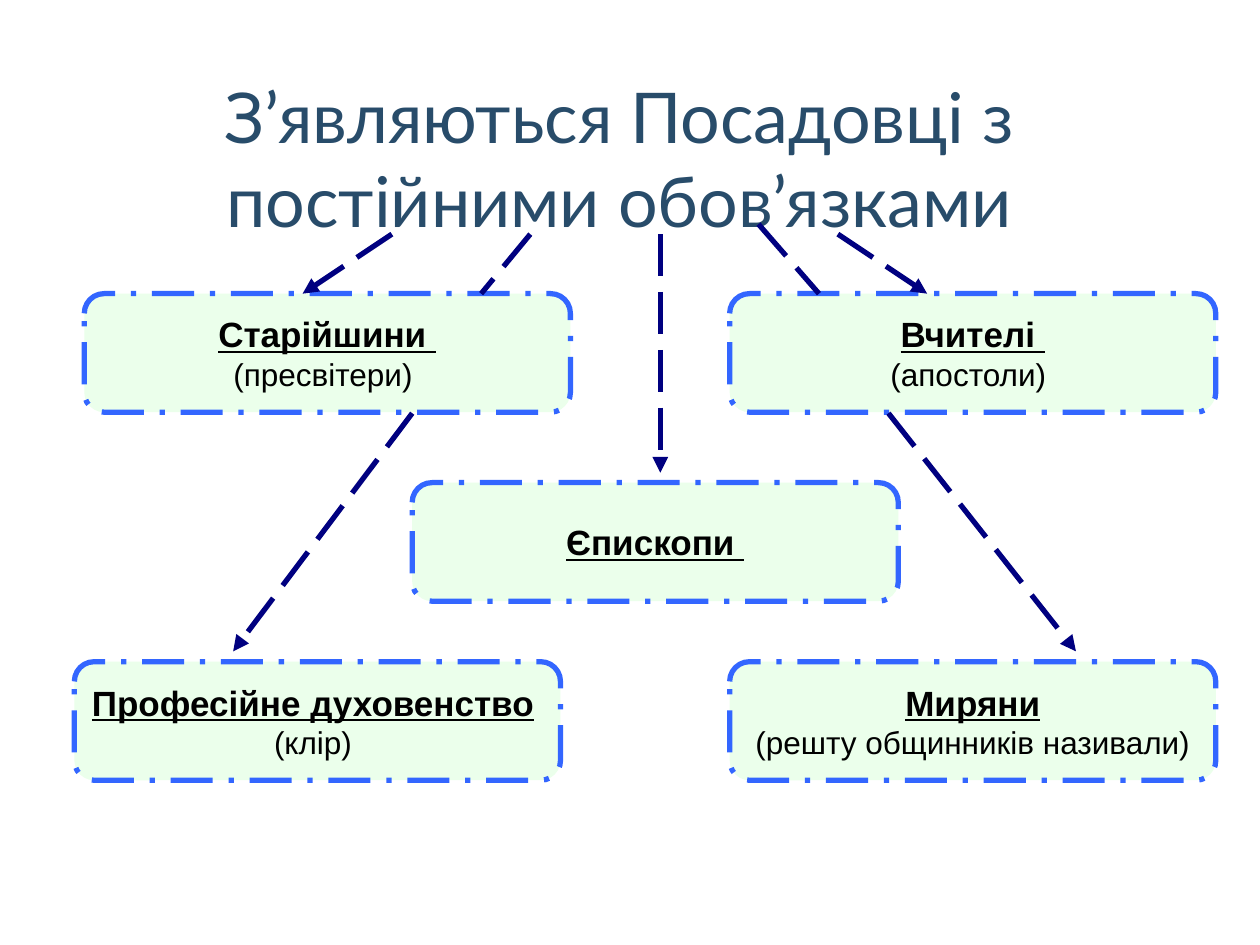
"""Build a slide on the permanent offices of the early church."""
from typing import NamedTuple

from pptx import Presentation
from pptx.dml.color import RGBColor
from pptx.enum.dml import MSO_LINE
from pptx.enum.shapes import MSO_CONNECTOR, MSO_SHAPE
from pptx.enum.text import MSO_ANCHOR, PP_ALIGN
from pptx.oxml.ns import qn
from pptx.util import Cm, Pt
from lxml.etree import SubElement

COLORS = {
    "title": "284C6A",
    "fill": "EBFFEB",
    "border": "3366FF",
    "arrow": "000080",
    "text": "000000",
}
BOX_WIDTH, BOX_HEIGHT = 9.8, 2.39
RIGHT_COLUMN = 14.71
TITLE_BOTTOM, TOP_ROW, MIDDLE_ROW, BOTTOM_ROW = 4.72, 5.92, 9.73, 13.34
TOP_ROW_END, BOTTOM_ARROW_END = 8.33, 13.13


class Office(NamedTuple):
    left: float
    top: float
    heading: str
    note: str = ""
    heading_end: str = ""


class Link(NamedTuple):
    start_x: float
    start_y: float
    end_x: float
    end_y: float
    has_head: bool = True


OFFICES = [
    Office(1.7, TOP_ROW, "Старійшини ", "(пресвітери) "),
    Office(RIGHT_COLUMN, TOP_ROW, "Вчителі ", "(апостоли) "),
    Office(8.31, MIDDLE_ROW, "Єпископи "),
    Office(1.5, BOTTOM_ROW, "Професійне духовенство", "(клір) ", " "),
    Office(RIGHT_COLUMN, BOTTOM_ROW, "Миряни", "(решту общинників називали)"),
]
LINKS = [
    Link(7.9, TITLE_BOTTOM, 6.1, TOP_ROW),
    Link(16.89, TITLE_BOTTOM, 18.69, TOP_ROW),
    Link(13.31, TITLE_BOTTOM, 13.31, 9.53),
    Link(10.69, TITLE_BOTTOM, 9.7, TOP_ROW, False),
    Link(8.31, TOP_ROW_END, 4.7, BOTTOM_ARROW_END),
    Link(15.29, 4.52, 16.51, TOP_ROW, False),
    Link(17.91, TOP_ROW_END, 21.69, BOTTOM_ARROW_END),
]


def color(name: str) -> RGBColor:
    return RGBColor.from_string(COLORS[name])


def format_run(run, size: int, font_name: str, color_name: str, strong: bool = False) -> None:
    run.font.size = Pt(size)
    run.font.name = font_name
    run.font.color.rgb = color(color_name)
    run.font.bold = strong
    run.font.underline = strong


def style_line(line, color_name: str, dash: MSO_LINE) -> None:
    line.color.rgb = color(color_name)
    line.width = Pt(3)
    line.dash_style = dash


def draw_title(slide, text: str) -> None:
    shape = slide.shapes.add_textbox(Cm(1.27), Cm(1.91), Cm(22.43), Cm(2.54))
    text_frame = shape.text_frame
    text_frame.word_wrap = True
    text_frame.vertical_anchor = MSO_ANCHOR.MIDDLE
    text_frame.text = text
    paragraph = text_frame.paragraphs[0]
    paragraph.alignment = PP_ALIGN.CENTER
    format_run(paragraph.runs[0], 40, "Lato", "title")


def draw_office(slide, office: Office) -> None:
    shape = slide.shapes.add_shape(
        MSO_SHAPE.ROUNDED_RECTANGLE,
        Cm(office.left), Cm(office.top), Cm(BOX_WIDTH), Cm(BOX_HEIGHT),
    )
    shape.shadow.inherit = False
    shape.fill.solid()
    shape.fill.fore_color.rgb = color("fill")
    style_line(shape.line, "border", MSO_LINE.LONG_DASH_DOT)
    text_frame = shape.text_frame
    text_frame.word_wrap = False
    text_frame.vertical_anchor = MSO_ANCHOR.MIDDLE
    text_frame.text = office.heading
    heading = text_frame.paragraphs[0]
    format_run(heading.runs[0], 20, "Arial", "text", strong=True)
    if office.heading_end:
        ending = heading.add_run()
        ending.text = office.heading_end
        format_run(ending, 18, "Arial", "text")
    if office.note:
        note = text_frame.add_paragraph()
        note.text = office.note
        format_run(note.runs[0], 18, "Arial", "text")
    for paragraph in text_frame.paragraphs:
        paragraph.alignment = PP_ALIGN.CENTER


def draw_link(slide, link: Link) -> None:
    connector = slide.shapes.add_connector(
        MSO_CONNECTOR.STRAIGHT,
        Cm(link.start_x), Cm(link.start_y), Cm(link.end_x), Cm(link.end_y),
    )
    style_line(connector.line, "arrow", MSO_LINE.LONG_DASH)
    properties = connector._element.spPr
    if link.has_head:
        SubElement(properties.find(qn("a:ln")), qn("a:tailEnd"), type="triangle")
    SubElement(properties, qn("a:effectLst"))


def main() -> None:
    presentation = Presentation()
    presentation.slide_width, presentation.slide_height = Cm(25.4), Cm(19.05)
    slide = presentation.slides.add_slide(presentation.slide_layouts[6])
    draw_title(slide, "З’являються Посадовці з постійними обов’язками")
    for office in OFFICES:
        draw_office(slide, office)
    for link in LINKS:
        draw_link(slide, link)
    presentation.save("out.pptx")


if __name__ == "__main__":
    main()
